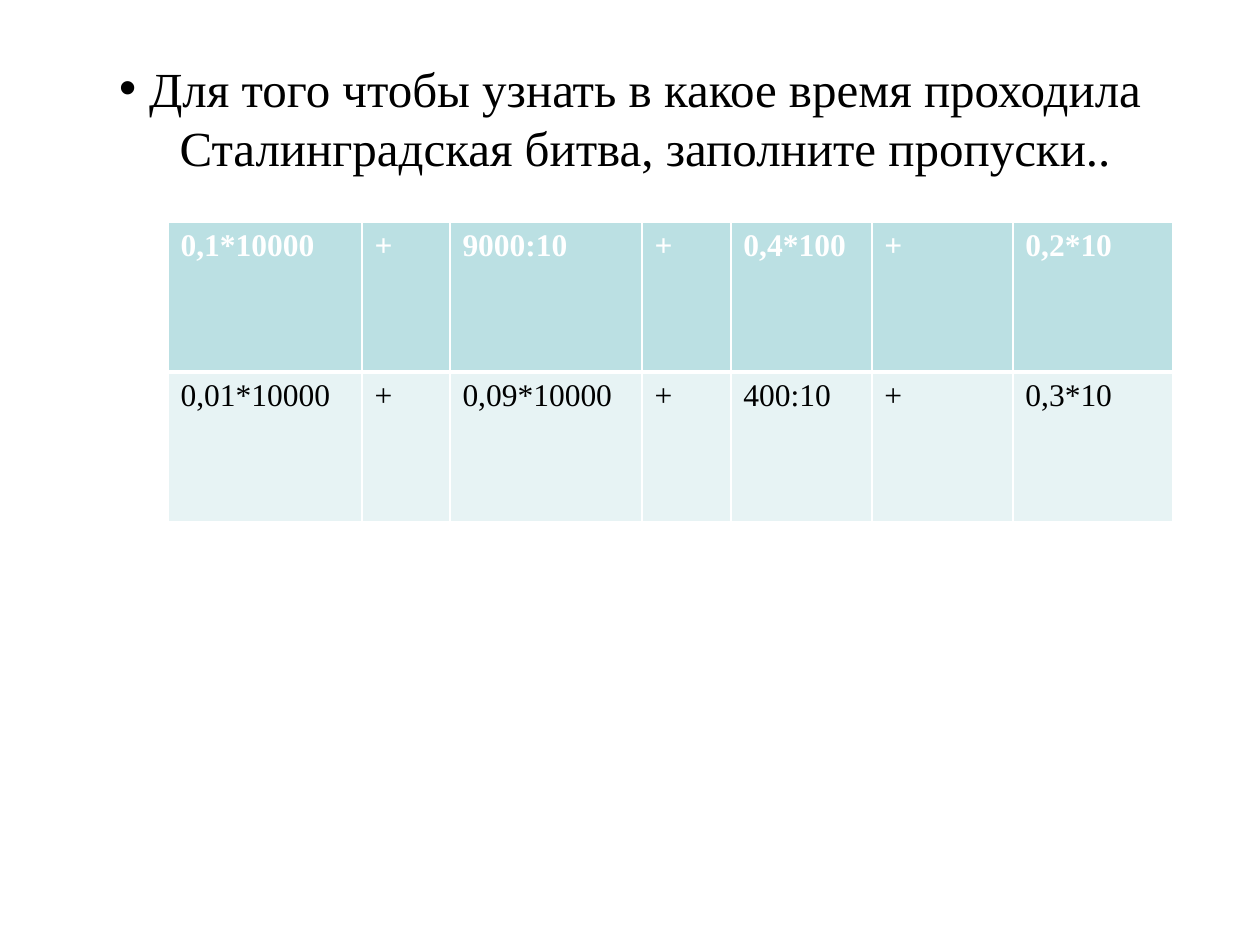
from lxml import etree
from pptx import Presentation
from pptx import util as u
from pptx.dml.color import RGBColor
from pptx.enum import text
from pptx.oxml.ns import qn

PX = 914400 / 126
BLACK = RGBColor(0x00, 0x00, 0x00)
WHITE = RGBColor(0xFF, 0xFF, 0xFF)
HEADER_FILL = RGBColor(0xBB, 0xE0, 0xE3)
BODY_FILL = RGBColor(0xE7, 0xF3, 0xF4)

COLUMN_WIDTHS = [194, 88, 192, 89, 141, 141, 160]
ROW_HEIGHT = 150
SUMS = [
    ["0,1*10000", "9000:10", "0,4*100", "0,2*10"],
    ["0,01*10000", "0,09*10000", "400:10", "0,3*10"],
]


def px(length):
    return u.Emu(round(length * PX))


class SlideBuilder:
    font_name = "Times New Roman"

    def __init__(self, page):
        self.page = page

    def style(self, para, size, color, bold=False):
        para.font.name = self.font_name
        para.font.size = u.Pt(size)
        para.font.color.rgb = color
        para.font.bold = bold

    def bullet_title(self, words, left, top, width, height, indent):
        box = self.page.shapes.add_textbox(px(left), px(top), px(width), px(height))
        frame = box.text_frame
        frame.word_wrap = True
        frame.vertical_anchor = text.MSO_ANCHOR.MIDDLE
        para = frame.paragraphs[0]
        para.text = words
        para.alignment = text.PP_ALIGN.CENTER
        properties = para._p.get_or_add_pPr()
        properties.set("marL", str(px(indent)))
        properties.set("indent", str(-px(indent)))
        etree.SubElement(properties, qn("a:buFont"), typeface="Arial")
        etree.SubElement(properties, qn("a:buChar"), char="•")
        self.style(para, 28, BLACK)

    def borders(self, cell, **widths):
        """Draw white lines, widths in points by side: L, R, T, B."""
        properties = cell._tc.get_or_add_tcPr()
        for index, (side, width) in enumerate(widths.items()):
            line = etree.Element(qn(f"a:ln{side}"), w=str(u.Pt(width)))
            fill = etree.SubElement(line, qn("a:solidFill"))
            etree.SubElement(fill, qn("a:srgbClr"), val=str(WHITE))
            properties.insert(index, line)

    def table(self, rows, left, top, widths, row_height):
        frame = self.page.shapes.add_table(
            len(rows), len(widths), px(left), px(top),
            px(sum(widths)), px(row_height * len(rows)))
        grid = frame.table
        for column, width in zip(grid.columns, widths):
            column.width = px(width)
        for r, values in enumerate(rows):
            grid.rows[r].height = px(row_height)
            header = r == 0
            for c, value in enumerate(values):
                cell = grid.cell(r, c)
                cell.text = value
                self.style(cell.text_frame.paragraphs[0], 18,
                           WHITE if header else BLACK, header)
                cell.fill.solid()
                cell.fill.fore_color.rgb = HEADER_FILL if header else BODY_FILL
                self.borders(cell, L=1, R=1, T=1 if header else 3,
                             B=3 if header else 1)


def main():
    deck = Presentation()
    deck.slide_width, deck.slide_height = px(1260), px(945)
    slide = SlideBuilder(deck.slides.add_slide(deck.slide_layouts[6]))
    slide.bullet_title(
        "Для того чтобы узнать в какое время проходила "
        "Сталинградская битва, заполните пропуски..",
        63, 38, 1134, 158, indent=30)
    rows = [" + ".join(terms).split(" ") for terms in SUMS]
    slide.table(rows, 168, 222, COLUMN_WIDTHS, ROW_HEIGHT)
    deck.save("out.pptx")


if __name__ == "__main__":
    main()
